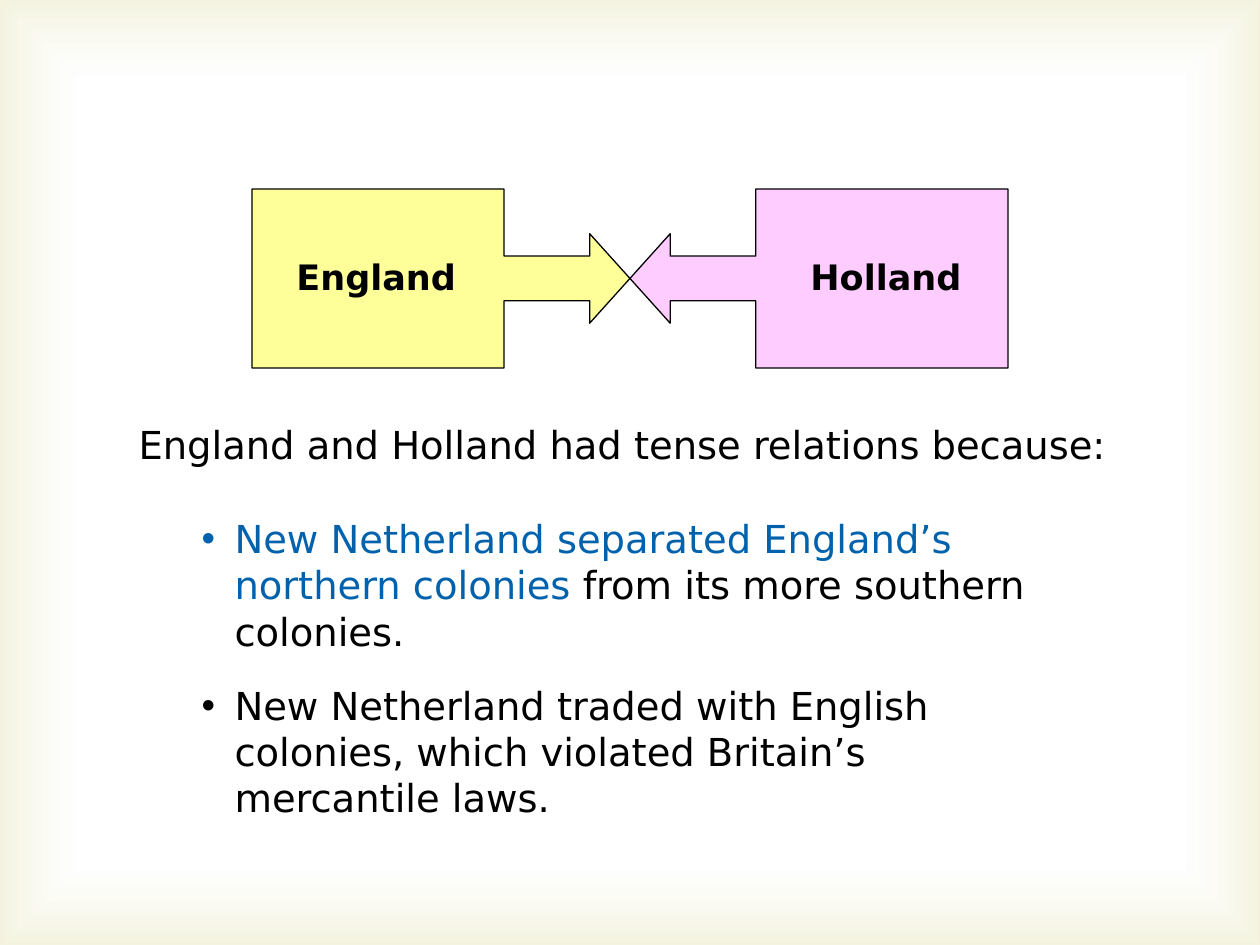
from dataclasses import dataclass

from lxml import etree
from pptx import Presentation
from pptx import util as u
from pptx.dml.color import RGBColor
from pptx.enum import shapes, text
from pptx.oxml import parse_xml
from pptx.oxml.ns import nsdecls, qn

PX_PER_INCH = 126
FONT = "DejaVu Sans"
BLACK = RGBColor(0x00, 0x00, 0x00)
BLUE = RGBColor(0x00, 0x62, 0xAC)
YELLOW = RGBColor(0xFF, 0xFF, 0x99)
PINK = RGBColor(0xFF, 0xCC, 0xFF)
WHITE = RGBColor(0xFF, 0xFF, 0xFF)
KHAKI = RGBColor(0xD1, 0xCA, 0x75)

Box = tuple[int, int, int, int]
Run = tuple[str, RGBColor]

SLIDE_BOX = (0, 0, 1260, 945)
LEAD_BOX = (126, 415, 1008, 59)
REASONS_BOX = (189, 509, 882, 321)
BULLET_INDENT = 33


@dataclass(frozen=True)
class Country:
    name: str
    preset: shapes.MSO_SHAPE
    fill: RGBColor
    callout: Box
    label: Box


COUNTRIES = [
    Country("England", shapes.MSO_SHAPE.RIGHT_ARROW_CALLOUT, YELLOW,
            (252, 189, 378, 179), (284, 249, 210, 54)),
    Country("Holland", shapes.MSO_SHAPE.LEFT_ARROW_CALLOUT, PINK,
            (630, 189, 378, 179), (798, 249, 179, 54)),
]

REASONS: list[list[Run]] = [
    [("New Netherland separated England’s northern colonies ", BLUE),
     ("from its more southern colonies.", BLACK)],
    [("New Netherland traded with English colonies, "
      "which violated Britain’s mercantile laws.", BLACK)],
]


def px(length: int) -> u.Emu:
    return u.Emu(round(length * u.Inches(1) / PX_PER_INCH))


def place(shape, box: Box) -> None:
    shape.left, shape.top, shape.width, shape.height = map(px, box)


def set_up_frame(frame) -> None:
    frame.word_wrap = True
    frame.auto_size = text.MSO_AUTO_SIZE.NONE
    frame.vertical_anchor = text.MSO_ANCHOR.TOP


def style(paragraph, size: int, bold: bool = False) -> None:
    paragraph.alignment = text.PP_ALIGN.LEFT
    paragraph.space_before = u.Pt(0)
    paragraph.font.name = FONT
    paragraph.font.size = u.Pt(size)
    paragraph.font.bold = bold
    paragraph.font.color.rgb = BLACK


def add_glow(slide) -> None:
    """Tint the slide's edges with a rectangular gradient behind everything."""
    glow = slide.shapes.add_shape(shapes.MSO_SHAPE.RECTANGLE, *map(px, SLIDE_BOX))
    glow.shadow.inherit = False
    glow.line.fill.background()
    glow.fill.gradient()
    stops = "".join(
        f'<a:gs pos="{position}000"><a:srgbClr val="{color}">'
        f'<a:alpha val="{alpha}000"/></a:srgbClr></a:gs>'
        for position, color, alpha in [(83, WHITE, 11), (100, KHAKI, 23)])
    gradient = parse_xml(
        f'<a:gradFill {nsdecls("a")} rotWithShape="1"><a:gsLst>{stops}</a:gsLst>'
        '<a:path path="rect"><a:fillToRect l="50000" t="50000" r="50000" b="50000"/>'
        '</a:path></a:gradFill>')
    properties = glow.element.spPr
    properties.replace(properties.find(qn("a:gradFill")), gradient)
    slide.shapes.element.insert(2, glow.element)


def add_country(slide, country: Country) -> None:
    group = slide.shapes.add_group_shape()
    callout = group.shapes.add_shape(country.preset, *map(px, country.callout))
    for index, value in enumerate((0.25, 0.25, 0.225, 0.667)):
        callout.adjustments[index] = value
    callout.shadow.inherit = False
    callout.fill.solid()
    callout.fill.fore_color.rgb = country.fill
    callout.line.color.rgb = BLACK
    callout.line.width = u.Pt(0.75)

    label = group.shapes.add_textbox(*map(px, country.label))
    set_up_frame(label.text_frame)
    paragraph = label.text_frame.paragraphs[0]
    paragraph.text = country.name
    style(paragraph, 20, bold=True)


def fill_lead(title) -> None:
    place(title, LEAD_BOX)
    set_up_frame(title.text_frame)
    paragraph = title.text_frame.paragraphs[0]
    paragraph.text = "England and Holland had tense relations because:"
    style(paragraph, 22)


def fill_reasons(body) -> None:
    place(body, REASONS_BOX)
    frame = body.text_frame
    set_up_frame(frame)
    for index, runs in enumerate(REASONS):
        paragraph = frame.add_paragraph() if index else frame.paragraphs[0]
        properties = paragraph._p.get_or_add_pPr()
        properties.set("marL", str(px(BULLET_INDENT)))
        properties.set("indent", str(-px(BULLET_INDENT)))
        etree.SubElement(properties, qn("a:buChar"), char="•")
        style(paragraph, 22)
        paragraph.space_after = u.Pt(16)
        for words, color in runs:
            run = paragraph.add_run()
            run.text = words
            run.font.color.rgb = color


def main() -> None:
    presentation = Presentation()
    presentation.slide_width, presentation.slide_height = map(px, SLIDE_BOX[2:])
    slide = presentation.slides.add_slide(presentation.slide_layouts[1])
    add_glow(slide)
    fill_lead(slide.shapes.title)
    fill_reasons(slide.placeholders[1])
    for country in COUNTRIES:
        add_country(slide, country)
    presentation.save("out.pptx")


if __name__ == "__main__":
    main()
